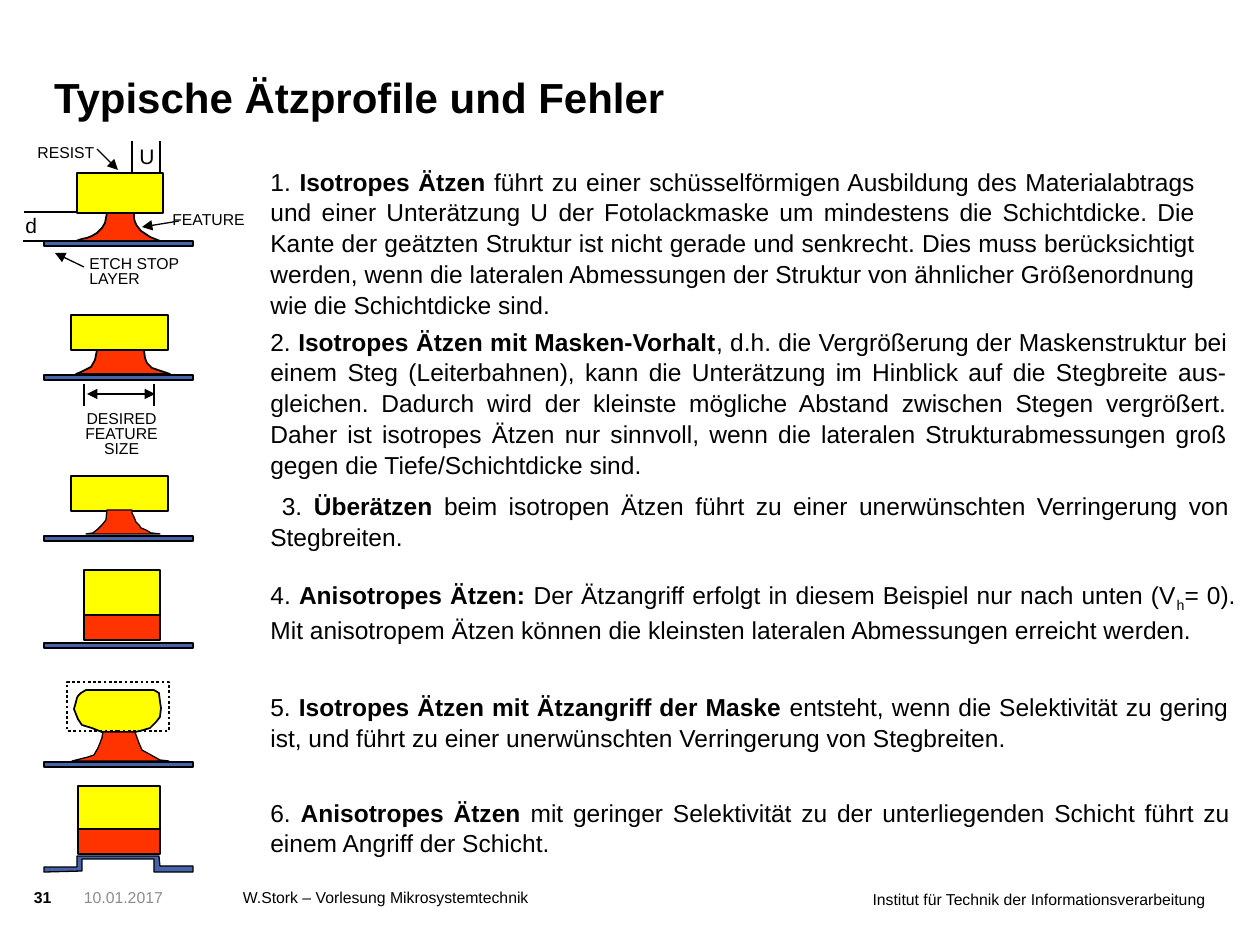
import pptx
import pptx.dml.color
import pptx.enum.dml
import pptx.enum.shapes
import pptx.enum.text
import pptx.oxml
import pptx.oxml.ns
import pptx.util

PX = 914400 / 126
COLORS = {"black": "000000", "gray": "8C8C8C", "resist": "FFFF00",
          "feature": "FF3300", "layer": "4664AA"}
ALIGN = pptx.enum.text.PP_ALIGN
ANCHOR = pptx.enum.text.MSO_ANCHOR
BOLD = {"bold": True}
SUBSCRIPT = {"baseline": -25000}


def emu(*lengths):
    return [round(length * PX) for length in lengths]


def rgb(name):
    return pptx.dml.color.RGBColor.from_string(COLORS[name])


class SlideBuilder:
    font = "Arial"

    def __init__(self, presentation):
        self.slide = presentation.slides.add_slide(presentation.slide_layouts[6])
        self.shapes = self.slide.shapes

    def text(self, box, runs, size, color="black", bold=False, inset=(0, 0), anchor=ANCHOR.TOP, **paragraph_format):
        """Add a one-paragraph box; runs is a list of (text, format) pairs."""
        frame = self.shapes.add_textbox(*emu(*box)).text_frame
        side, edge = emu(*inset)
        frame_format = {"word_wrap": True, "vertical_anchor": anchor,
                        "margin_left": side, "margin_right": side,
                        "margin_top": edge, "margin_bottom": edge}
        for name, value in frame_format.items():
            setattr(frame, name, value)
        paragraph = frame.paragraphs[0]
        for name, value in paragraph_format.items():
            setattr(paragraph, name, value)
        for content, run_format in runs:
            for index, line in enumerate(content.split("\n")):
                if index:
                    paragraph.add_line_break()
                run = paragraph.add_run()
                run.text = line
                font_format = {"name": self.font, "size": pptx.util.Pt(size),
                               "bold": run_format.get("bold", bold)}
                for name, value in font_format.items():
                    setattr(run.font, name, value)
                run.font.color.rgb = rgb(color)
                if "baseline" in run_format:
                    run._r.get_or_add_rPr().set("baseline", str(run_format["baseline"]))

    def label(self, box, content, size=9, spacing=1.05, align=ALIGN.LEFT):
        self.text(box, [(content, {})], size, inset=(12.6, 6.3),
                  line_spacing=spacing, alignment=align)

    def description(self, top, width, height, runs):
        self.text((258, top, width, height), runs, 14, inset=(12.6, 6.3),
                  line_spacing=1.05, alignment=ALIGN.JUSTIFY)

    def style(self, shape, fill, width):
        shape.shadow.inherit = False
        if fill:
            shape.fill.solid()
            shape.fill.fore_color.rgb = rgb(fill)
        else:
            shape.fill.background()
        shape.line.color.rgb = rgb("black")
        shape.line.width = pptx.util.Pt(width)
        return shape

    def rectangle(self, box, fill=None, width=1.0):
        kind = pptx.enum.shapes.MSO_SHAPE.RECTANGLE
        return self.style(self.shapes.add_shape(kind, *emu(*box)), fill, width)

    def stop_layer(self, top):
        self.rectangle((44, top, 149, 5), "layer", 0.75)

    def outline(self, points, fill, width=1.0):
        builder = self.shapes.build_freeform(*points[0], scale=PX)
        builder.add_line_segments(points[1:], close=True)
        self.style(builder.convert_to_shape(), fill, width)

    def line(self, start, end, width=0.75, arrows=()):
        """Draw a line; arrows may hold headEnd (start) and tailEnd (end)."""
        kind = pptx.enum.shapes.MSO_CONNECTOR.STRAIGHT
        connector = self.shapes.add_connector(kind, *emu(*start, *end))
        connector.line.color.rgb = rgb("black")
        connector.line.width = pptx.util.Pt(width)
        namespace = pptx.oxml.ns.nsdecls("a")
        for arrow in arrows:
            connector.line._get_or_add_ln().append(
                pptx.oxml.parse_xml(f'<a:{arrow} {namespace} type="triangle"/>'))
        connector._element.spPr.append(pptx.oxml.parse_xml(f"<a:effectLst {namespace}/>"))


def draw_header_and_footer(builder):
    builder.text((54, 45, 953, 77), [("Typische Ätzprofile und Fehler", BOLD)], 24,
                 anchor=ANCHOR.BOTTOM)
    builder.text((34, 888, 45, 30), [("31", BOLD)], 9)
    builder.text((84, 888, 144, 49), [("10.01.2017", {})], 9, "gray")
    builder.text((243, 888, 377, 49), [("W.Stork – Vorlesung Mikrosystemtechnik", {})], 9)
    builder.text((828, 890, 377, 49),
                 [("Institut für Technik der Informationsverarbeitung", {})], 9,
                 alignment=ALIGN.RIGHT)


def draw_isotropic(builder):
    for start, end in [((24, 212), (77, 212)), ((23, 241), (54, 241)),
                       ((132, 141), (132, 173)), ((160, 141), (160, 173))]:
        builder.line(start, end, 1)
    builder.rectangle((77, 173, 86, 40), "resist")
    builder.outline([(76, 241), (160, 241), (150, 237), (141, 231), (137, 226),
                     (135, 222), (134, 218), (134, 213), (107, 213), (105, 223),
                     (102, 228), (97, 233), (92, 236), (87, 238), (82, 239)], "feature")
    builder.label((13, 205, 26, 38), "d", 12)
    builder.label((127, 136, 42, 38), "U", 12)
    builder.label((25, 136, 95, 32), "RESIST")
    builder.label((160, 203, 116, 32), "FEATURE")
    builder.label((77, 251, 116, 43), "ETCH STOP\nLAYER", spacing=0.8)
    builder.line((97, 149), (118, 170), arrows=["tailEnd"])
    builder.line((142, 227), (179, 221), arrows=["headEnd"])
    builder.line((55, 253), (84, 267), arrows=["headEnd"])
    builder.stop_layer(241)


def draw_wide_mask(builder):
    builder.rectangle((71, 315, 97, 35), "resist")
    builder.outline([(76, 374), (170, 374), (158, 370), (152, 368), (147, 363),
                     (145, 358), (144, 350), (97, 350), (95, 360), (91, 367),
                     (87, 369), (81, 372)], "feature")
    builder.label((69, 406, 105, 58), "DESIRED\nFEATURE\nSIZE", spacing=0.8,
                  align=ALIGN.CENTER)
    for x in (84, 154):
        builder.line((x, 384), (x, 406))
    builder.line((87, 394), (155, 394), arrows=["headEnd", "tailEnd"])
    builder.stop_layer(375)


def draw_overetched(builder):
    builder.rectangle((71, 476, 97, 35), "resist")
    builder.outline([(86, 534), (160, 534), (151, 533), (146, 530), (141, 528),
                     (139, 525), (136, 522), (134, 517), (132, 513), (132, 510),
                     (107, 510), (106, 520), (102, 525), (98, 529), (93, 533)],
                    "feature", 0.75)
    builder.stop_layer(536)


def draw_anisotropic(builder):
    builder.rectangle((84, 570, 76, 46), "resist", 1.5)
    builder.rectangle((84, 615, 76, 25), "feature", 1.5)
    builder.stop_layer(643)


def draw_eroded_mask(builder):
    builder.outline([(91, 690), (154, 690), (159, 693), (160, 701), (161, 708),
                     (160, 717), (156, 722), (150, 728), (140, 731), (135, 732),
                     (102, 732), (92, 728), (82, 725), (78, 719), (76, 714),
                     (74, 709), (76, 702), (77, 698), (78, 696), (81, 693),
                     (86, 690)], "resist")
    builder.outline([(103, 732), (135, 732), (139, 743), (142, 750), (151, 755),
                     (160, 760), (169, 761), (72, 761), (88, 757), (94, 755),
                     (98, 748), (102, 738)], "feature", 0.75)
    initial_mask = builder.rectangle((67, 682, 102, 49), width=1.5)
    initial_mask.line.dash_style = pptx.enum.dml.MSO_LINE.ROUND_DOT
    builder.stop_layer(762)


def draw_attacked_layer(builder):
    builder.rectangle((78, 786, 82, 43), "resist", 0.75)
    builder.rectangle((78, 829, 82, 25), "feature", 0.75)
    builder.outline([(44, 867), (77, 867), (77, 856), (159, 856), (160, 866),
                     (193, 866), (193, 872), (154, 872), (154, 859), (82, 859),
                     (82, 871), (44, 872)], "layer", 0.75)


DESCRIPTIONS = [
    (159, 950, 161, [("1. ", {}), ("Isotropes Ätzen", BOLD), (" führt zu einer schüsselförmigen Ausbildung des Materialabtrags und einer Unterätzung U der Fotolackmaske um mindestens die Schichtdicke. Die Kante der geätzten Struktur ist nicht gerade und senkrecht. Dies muss berücksichtigt werden, wenn die lateralen Abmessungen der Struktur von ähnlicher Größenordnung wie die Schichtdicke sind.", {})]),
    (319, 982, 161, [("2. ", {}), ("Isotropes Ätzen mit Masken-Vorhalt", BOLD), (", d.h. die Vergrößerung der Maskenstruktur bei einem Steg (Leiterbahnen), kann die Unterätzung im Hinblick auf die Stegbreite aus-\ngleichen. Dadurch wird der kleinste mögliche Abstand zwischen Stegen vergrößert. Daher ist isotropes Ätzen nur sinnvoll, wenn die lateralen Strukturabmessungen groß gegen die Tiefe/Schichtdicke sind.", {})]),
    (483, 984, 72, [(" 3. ", {}), ("Überätzen", BOLD), (" beim isotropen Ätzen führt zu einer unerwünschten Verringerung von Stegbreiten.", {})]),
    (572, 990, 72, [("4. ", {}), ("Anisotropes Ätzen:", BOLD), (" Der Ätzangriff erfolgt in diesem Beispiel nur nach unten (V", {}), ("h", SUBSCRIPT), ("= 0).\nMit anisotropem Ätzen können die kleinsten lateralen Abmessungen erreicht werden.", {})]),
    (684, 983, 72, [("5. ", {}), ("Isotropes Ätzen mit Ätzangriff der Maske ", BOLD), ("entsteht, wenn die Selektivität zu gering ist, und führt zu einer unerwünschten Verringerung von Stegbreiten.", {})]),
    (790, 985, 72, [("6. ", {}), ("Anisotropes Ätzen", BOLD), (" mit geringer Selektivität zu der unterliegenden Schicht führt zu einem Angriff der Schicht.", {})]),
]


def main():
    presentation = pptx.Presentation()
    presentation.slide_width, presentation.slide_height = emu(1260, 945)
    builder = SlideBuilder(presentation)
    for draw in (draw_header_and_footer, draw_anisotropic, draw_eroded_mask,
                 draw_attacked_layer, draw_isotropic, draw_wide_mask, draw_overetched):
        draw(builder)
    for description in DESCRIPTIONS:
        builder.description(*description)
    presentation.save("out.pptx")


if __name__ == "__main__":
    main()
